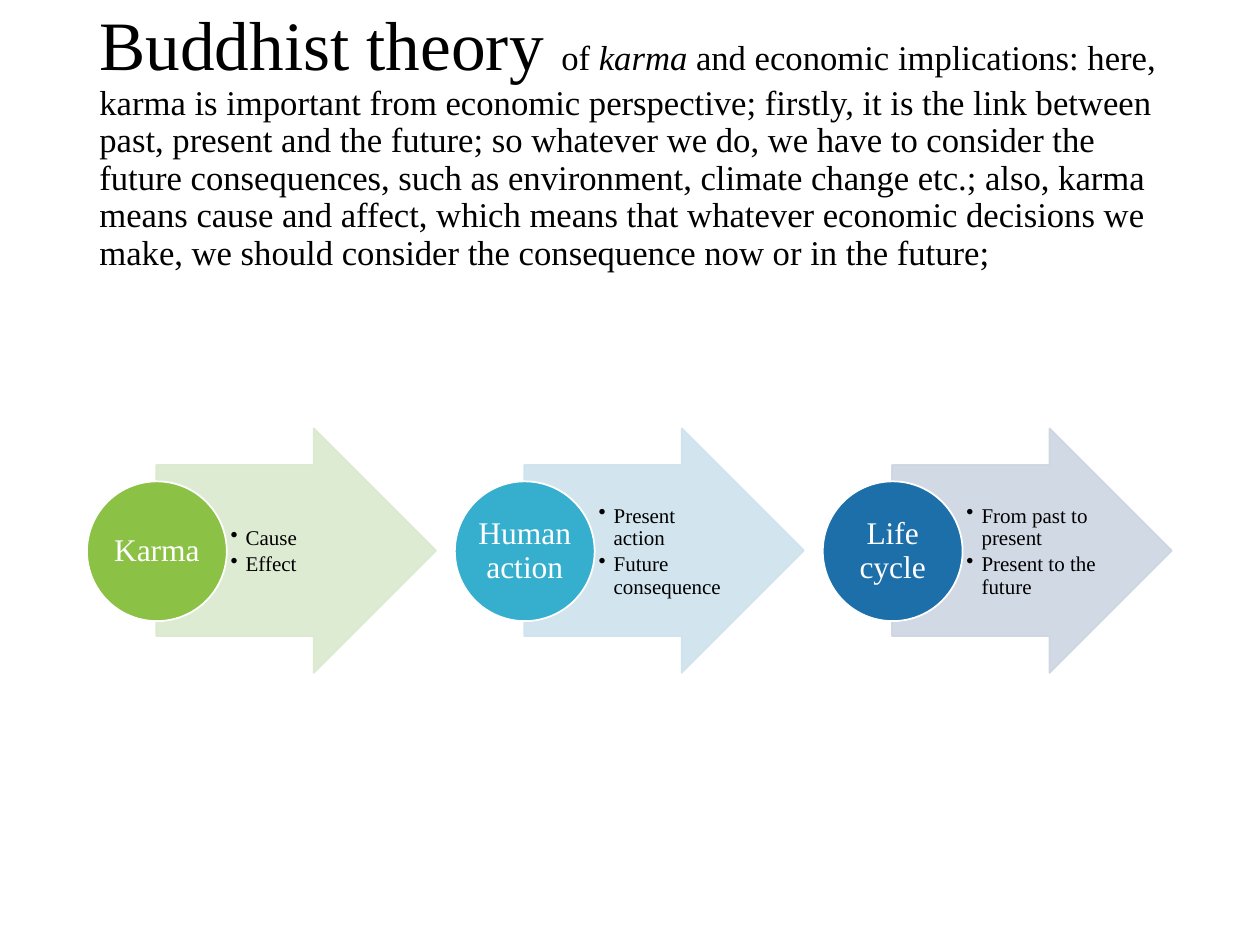
from lxml import etree
from pptx import Presentation
from pptx.dml.color import RGBColor
from pptx.enum.shapes import MSO_SHAPE
from pptx.enum.text import MSO_ANCHOR, PP_ALIGN
from pptx.oxml.ns import qn
from pptx.util import Inches, Pt

ARROW, OVAL = MSO_SHAPE.RIGHT_ARROW, MSO_SHAPE.OVAL
MIDDLE = MSO_ANCHOR.MIDDLE
LEFT, CENTER = PP_ALIGN.LEFT, PP_ALIGN.CENTER
FONT = "Times New Roman"
COLORS = {
    "black": "000000", "white": "FFFFFF",
    "green": "8BC145", "pale green": "DAE9CF",
    "cyan": "36AFCE", "pale cyan": "CEE3ED",
    "blue": "1D6FA9", "pale blue": "CDD5E2",
}
TITLE = [
    ("Buddhist theory ", 39.6, False),
    ("of ", 19.8, False),
    ("karma", 19.8, True),
    (" and economic implications: here, karma is important from economic "
     "perspective; firstly, it is the link between past, present and the "
     "future; so whatever we do, we have to consider the future consequences, "
     "such as environment, climate change etc.; also, karma means cause and "
     "affect, which means that whatever economic decisions we make, we should "
     "consider the consequence now or in the future;", 19.8, False),
]
STAGES = [
    ("Karma", "green", ["Cause", "Effect"]),
    ("Human action", "cyan", ["Present action", "Future consequence"]),
    ("Life cycle", "blue", ["From past to present", "Present to the future"]),
]
START, STEP = 0.69, 2.92


def rgb(name):
    return RGBColor.from_string(COLORS[name])


def add_box(slide, x, y, w, h, pads):
    box = slide.shapes.add_textbox(Inches(x), Inches(y), Inches(w), Inches(h))
    frame = box.text_frame
    frame.word_wrap = True
    frame.vertical_anchor = MIDDLE
    (frame.margin_left, frame.margin_top,
     frame.margin_right, frame.margin_bottom) = map(Inches, pads)
    return frame


def style(para, color, align=LEFT, size=None):
    para.alignment = align
    para.line_spacing = 0.9
    para.font.name = FONT
    para.font.color.rgb = rgb(color)
    if size:
        para.font.size = Pt(size)


def add_title(slide):
    frame = add_box(slide, 0.69, 0.4, 8.62, 1.45, (0.1, 0.05, 0.1, 0.05))
    para = frame.paragraphs[0]
    style(para, "black")
    for text, size, slant in TITLE:
        run = para.add_run()
        run.text = text
        run.font.name = FONT
        run.font.color.rgb = rgb("black")
        run.font.size = Pt(size)
        run.font.italic = slant


def add_shape(slide, kind, x, y, w, h, fill, line):
    shape = slide.shapes.add_shape(
        kind, Inches(x), Inches(y), Inches(w), Inches(h))
    shape.shadow.inherit = False
    shape.fill.solid()
    shape.fill.fore_color.rgb = rgb(fill)
    shape.line.color.rgb = rgb(line)
    shape.line.width = Pt(1)
    return shape


def add_arrow(slide, x, color):
    arrow = add_shape(slide, ARROW, x, 3.4, 2.22, 1.94, color, color)
    arrow.adjustments[0] = 0.7
    arrow.adjustments[1] = 0.5
    # Fill and line are 90 % opaque
    for tint in arrow.element.spPr.iter(qn("a:srgbClr")):
        etree.SubElement(tint, qn("a:alpha"), val="90000")


def add_points(slide, x, points):
    frame = add_box(slide, x, 3.7, 1.08, 1.36, (0.03, 0.01, 0.02, 0.01))
    for i, point in enumerate(points):
        para = frame.add_paragraph() if i else frame.paragraphs[0]
        para.text = point
        style(para, "black", size=12)
        para.space_after = Pt(1.8)
        # Hanging bullet
        props = para._p.get_or_add_pPr()
        props.set("marL", str(Inches(0.12)))
        props.set("indent", str(Inches(-0.12)))
        etree.SubElement(props, qn("a:buChar"), char="•")
        # Bullets must precede the default run properties
        props.append(props.find(qn("a:defRPr")))


def add_label(slide, x, text):
    frame = add_box(slide, x, 3.98, 0.79, 0.79, (0.01,) * 4)
    para = frame.paragraphs[0]
    para.text = text
    style(para, "white", CENTER, 18)


def add_stage(slide, x, label, color, points):
    add_arrow(slide, x + 0.55, "pale " + color)
    add_points(slide, x + 1.11, points)
    add_shape(slide, OVAL, x, 3.82, 1.11, 1.11, color, "white")
    add_label(slide, x + 0.16, label)


def main():
    deck = Presentation()
    deck.slide_width, deck.slide_height = Inches(10), Inches(7.5)
    slide = deck.slides.add_slide(deck.slide_layouts[6])

    # Heading
    add_title(slide)

    # Row of stages
    for i, (label, color, points) in enumerate(STAGES):
        add_stage(slide, START + i * STEP, label, color, points)

    deck.save("out.pptx")


if __name__ == "__main__":
    main()
